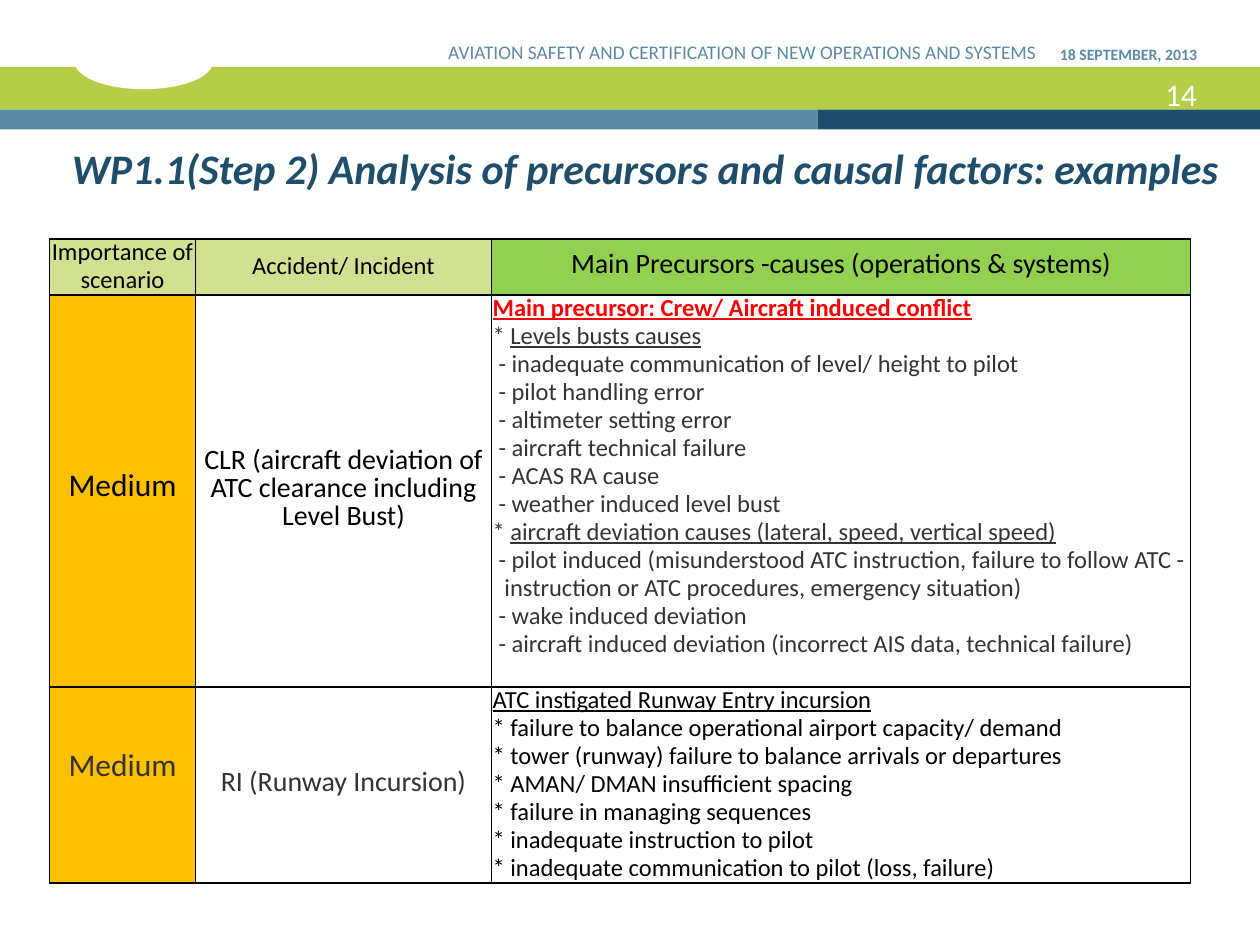
from pptx import Presentation
from pptx.dml.color import RGBColor
from pptx.enum.shapes import MSO_SHAPE as Shape
from pptx.enum.text import MSO_ANCHOR as Anchor, PP_ALIGN as Align
from pptx.oxml import parse_xml
from pptx.oxml.ns import nsdecls
from pptx.util import Cm, Pt

BLACK, GREY, RED, WHITE = "000000", "333333", "FF0000", "FFFFFF"
NAVY, BLUE, LIME = "1E4E6B", "5B8AA5", "B5CE48"
PALE, GREEN, AMBER = "D2E191", "92D050", "FFC000"

HEADS = [
    ("Importance of scenario", 14, PALE),
    ("Accident/ Incident", 14, PALE),
    ("Main Precursors -causes (operations & systems)", 16, GREEN),
]
ROWS = [
    ("Medium", "CLR (aircraft deviation of ATC clearance including Level Bust)", BLACK, GREY, [
        ("head", "Main precursor: Crew/ Aircraft induced conflict"),
        ("group", "Levels busts causes"),
        ("dash", "inadequate communication of level/ height to pilot"),
        ("dash", "pilot handling error"),
        ("dash", "altimeter setting error"),
        ("dash", "aircraft technical failure"),
        ("dash", "ACAS RA cause"),
        ("dash", "weather induced level bust"),
        ("group", "aircraft deviation causes (lateral, speed, vertical speed)"),
        ("dash", "pilot induced (misunderstood ATC instruction, failure to follow ATC -"
                 " instruction or ATC procedures, emergency situation)"),
        ("dash", "wake induced deviation"),
        ("dash", "aircraft induced deviation (incorrect AIS data, technical failure)"),
    ]),
    ("Medium", "RI (Runway Incursion)", GREY, BLACK, [
        ("title", "ATC instigated Runway Entry incursion"),
        ("star", "failure to balance operational airport capacity/ demand"),
        ("star", "tower (runway) failure to balance arrivals or departures"),
        ("star", "AMAN/ DMAN insufficient spacing"),
        ("star", "failure in managing sequences"),
        ("star", "inadequate instruction to pilot"),
        ("star", "inadequate communication to pilot (loss, failure)"),
    ]),
]
MARKS = {"group": "* ", "star": "* ", "dash": "- "}


def paint(target, tint):
    target.fill.solid()
    target.fill.fore_color.rgb = RGBColor.from_string(tint)


def style(font, size, tint, bold=False, slant=False):
    font.name, font.size = "Calibri", Pt(size)
    font.bold, font.italic = bold, slant
    font.color.rgb = RGBColor.from_string(tint)


def add_block(slide, kind, box, tint):
    block = slide.shapes.add_shape(kind, *map(Cm, box))
    block.shadow.inherit = False
    paint(block, tint)
    block.line.fill.background()


def add_label(slide, box, text, size, tint, align=Align.RIGHT, right=0, **looks):
    frame = slide.shapes.add_textbox(*map(Cm, box)).text_frame
    frame.word_wrap = True
    frame.vertical_anchor = Anchor.BOTTOM
    frame.margin_right = Cm(right)
    frame.text = text
    para = frame.paragraphs[0]
    para.alignment = align
    style(para.runs[0].font, size, tint, **looks)


def add_banner(slide, left, top, width):
    split = 16.48
    add_block(slide, Shape.RECTANGLE, (left, top, width, 0.86), LIME)
    add_block(slide, Shape.RECTANGLE, (left + split, top + 0.86, width - split, 0.4), NAVY)
    add_block(slide, Shape.RECTANGLE, (left, top + 0.86, split, 0.4), BLUE)
    add_block(slide, Shape.OVAL, (left + 1.5, top - 0.67, 2.8, 1.12), WHITE)
    edge = left + width - 1.27
    add_label(slide, (edge - 2.1, top + 0.02, 2.1, 1.02), "14", 18, WHITE)
    add_label(slide, (edge - 3.02, top - 1.22, 3.02, 1.27),
              "18 SEPTEMBER, 2013", 9, BLUE, bold=True)
    add_label(slide, (left + 7.49, top - 1.22, 13.41, 1.27),
              "AVIATION SAFETY AND CERTIFICATION OF NEW OPERATIONS AND SYSTEMS", 11, BLUE)


def frame_cell(cell, tint=None):
    cell.margin_left = cell.margin_right = Cm(0.02)
    cell.margin_top = cell.margin_bottom = 0
    props = cell._tc.get_or_add_tcPr()
    for side in ("lnL", "lnR", "lnT", "lnB"):
        props.append(parse_xml(
            f'<a:{side} {nsdecls("a")} w="12700"><a:solidFill>'
            f'<a:srgbClr val="{BLACK}"/></a:solidFill></a:{side}>'))
    if tint:
        paint(cell, tint)
    else:
        cell.fill.background()


def fill_cell(cell, text, size, tint, back=None):
    frame_cell(cell, back)
    cell.vertical_anchor = Anchor.MIDDLE
    cell.text = text
    para = cell.text_frame.paragraphs[0]
    para.alignment, para.line_spacing = Align.CENTER, Pt(16)
    style(para.runs[0].font, size, tint)


def fill_list(cell, items, tint):
    frame_cell(cell)
    frame = cell.text_frame
    frame.text = "\n".join(MARKS.get(kind, "") for kind, _ in items)
    for para, (kind, text) in zip(frame.paragraphs, items):
        para.line_spacing = Pt(16)
        if kind == "dash":
            props = para._p.get_or_add_pPr()
            props.set("marL", str(Cm(0.24)))
            props.set("indent", str(Cm(-0.12)))
        run = para.add_run()
        run.text = text
        for part in para.runs:
            style(part.font, 14, RED if kind == "head" else tint, bold=kind == "head")
        run.font.underline = kind in ("head", "title", "group")


def add_grid(slide, left, top, width):
    sides = (2.94, 5.97)
    widths = (*sides, width - sum(sides))
    heights = (Pt(16 * 2), Pt(16 * 14), Pt(16 * 7))
    grid = slide.shapes.add_table(3, 3, Cm(left), Cm(top), Cm(width), sum(heights)).table
    for col, size in zip(grid.columns, widths):
        col.width = Cm(size)
    for row, size in zip(grid.rows, heights):
        row.height = size
    for col, (text, size, back) in enumerate(HEADS):
        fill_cell(grid.cell(0, col), text, size, BLACK, back)
    for row, (level, event, tint, ink, items) in enumerate(ROWS, 1):
        fill_cell(grid.cell(row, 0), level, 18, tint, AMBER)
        fill_cell(grid.cell(row, 1), event, 16, tint)
        fill_list(grid.cell(row, 2), items, ink)
    grid.cell(2, 0).margin_bottom = Pt(16)


def main():
    deck = Presentation()
    deck.slide_width, deck.slide_height = Cm(25.4), Cm(19.05)
    slide = deck.slides.add_slide(deck.slide_layouts[6])
    add_banner(slide, 0, 1.35, 25.4)
    add_grid(slide, 1, 4.82, 23)
    add_label(slide, (1.2, 1.85, 23.67, 2.16),
              "WP1.1(Step 2) Analysis of precursors and causal factors: examples",
              24, NAVY, Align.LEFT, 0.25, bold=True, slant=True)
    deck.save("out.pptx")


if __name__ == "__main__":
    main()
